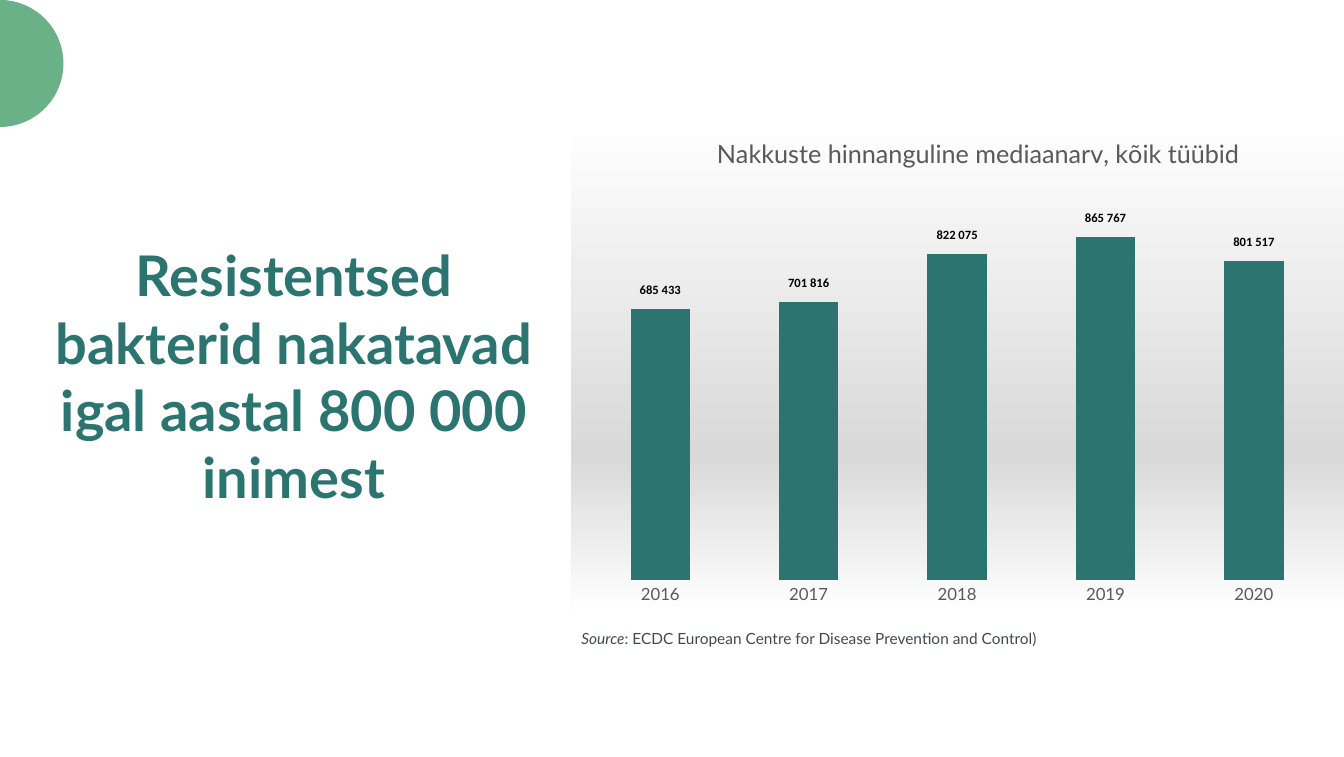
from dataclasses import dataclass
from math import cos, pi, sin

from lxml import etree
from pptx import Presentation
from pptx.chart.data import CategoryChartData
from pptx.dml.color import RGBColor
from pptx.enum.chart import XL_CHART_TYPE as ChartType, XL_TICK_MARK as Tick
from pptx.enum.text import MSO_ANCHOR as Anchor, MSO_AUTO_SIZE as AutoSize, PP_ALIGN as Align
from pptx.oxml import parse_xml
from pptx.oxml.ns import nsdecls, qn
from pptx.util import Cm, Pt

TEAL, GREEN, GREY, SLATE, BLACK = "2C7470", "6BB188", "595959", "3F4A52", "000000"


@dataclass
class Box:
    left: float
    top: float
    width: float
    height: float

    def lengths(self) -> tuple:
        return Cm(self.left), Cm(self.top), Cm(self.width), Cm(self.height)

    def within(self, outer: "Box") -> dict[str, float]:
        """Position as fractions of the outer box."""
        return {"x": (self.left - outer.left) / outer.width,
                "y": (self.top - outer.top) / outer.height,
                "w": self.width / outer.width, "h": self.height / outer.height}


@dataclass
class YearCount:
    year: str
    index: int  # share of the highest year, in percent
    infections: int

    def label(self) -> str:
        return f"{self.infections:,}".replace(",", " ")


YEARS = [
    YearCount("2016", 79, 685433),
    YearCount("2017", 81, 701816),
    YearCount("2018", 95, 822075),
    YearCount("2019", 100, 865767),
    YearCount("2020", 93, 801517),
]
CHART = Box(14.4, 2.97, 19.47, 12.5)
PLOT = Box(14.77, 5.97, 18.7, 8.65)
CHART_TITLE = Box(17.95, 3.3, 13.3, 0.9)


def rgb(value: str) -> RGBColor:
    return RGBColor.from_string(value)


def style(font, size: float, color: str, name: str = "Lato", bold: bool = False) -> None:
    font.size, font.name, font.bold = Pt(size), name, bold
    font.color.rgb = rgb(color)


def add_text(s, box: Box, text: str):
    tf = s.shapes.add_textbox(*box.lengths()).text_frame
    tf.word_wrap = True
    tf.text = text
    return tf


def manual_layout(place: dict[str, float], inner: bool = False):
    """Chart layout element for the given fractions."""
    layout = etree.Element(qn("c:layout"))
    manual = etree.SubElement(layout, qn("c:manualLayout"))
    values = {"layoutTarget": "inner"} if inner else {}
    values |= {"xMode": "edge", "yMode": "edge"}
    values |= {k: f"{v:.4f}" for k, v in place.items()}
    for tag, value in values.items():
        etree.SubElement(manual, qn(f"c:{tag}")).set("val", value)
    return layout


def replace_layout(parent, layout, position: int) -> None:
    for old in parent.findall(qn("c:layout")):
        parent.remove(old)
    parent.insert(position, layout)


def add_half_disc(s, radius: float) -> None:
    steps = 90
    angles = [pi * i / steps - pi / 2 for i in range(steps + 1)]
    points = [(Cm(radius * cos(a)), Cm(radius * (1 + sin(a)))) for a in angles]
    builder = s.shapes.build_freeform(*points[0])
    builder.add_line_segments(points[1:], close=True)
    sp = builder.convert_to_shape()
    sp.shadow.inherit = False
    sp.fill.solid()
    sp.fill.fore_color.rgb = rgb(GREEN)
    sp.line.fill.background()


def add_infection_chart(s) -> None:
    data = CategoryChartData(number_format="#,##0")
    data.categories = [y.year for y in YEARS]
    data.add_series("Series 1", [y.index for y in YEARS])
    chart = s.shapes.add_chart(ChartType.COLUMN_CLUSTERED, *CHART.lengths(), data).chart
    style(chart.font, 10, BLACK)
    chart.has_legend = False

    # Chart title
    chart.has_title = True
    tf = chart.chart_title.text_frame
    tf.text = "Nakkuste hinnanguline mediaanarv, kõik tüübid"
    style(tf.paragraphs[0].runs[0].font, 18, GREY)
    place = CHART_TITLE.within(CHART)
    title_layout = manual_layout({k: place[k] for k in "xy"})
    replace_layout(chart.chart_title._element, title_layout, 1)
    chart.chart_title.include_in_layout = False

    # Columns
    plot = chart.plots[0]
    plot.gap_width, plot.overlap, plot.vary_by_categories = 150, -25, False
    fill = plot.series[0].format.fill
    fill.solid()
    fill.fore_color.rgb = rgb(TEAL)
    plot_area = chart._chartSpace.chart.plotArea
    replace_layout(plot_area, manual_layout(PLOT.within(CHART), inner=True), 0)

    # Axes
    years, values = chart.category_axis, chart.value_axis
    years.major_tick_mark = years.minor_tick_mark = Tick.NONE
    years.format.line.fill.background()
    style(years.tick_labels.font, 12, GREY)
    values.minimum_scale, values.maximum_scale = 0, 100
    values.has_major_gridlines = False
    values.visible = False

    # Background gradient
    stops = "".join(f'<a:gs pos="{pos}000"><a:srgbClr val="{color}"/></a:gs>'
                    for pos, color in ((0, "FFFFFF"), (68, "D9D9D9"), (100, "FFFFFF")))
    chart._chartSpace.chart.addnext(parse_xml(
        f'<c:spPr {nsdecls("c", "a")}><a:gradFill><a:gsLst>{stops}</a:gsLst>'
        '<a:lin ang="5400000" scaled="0"/></a:gradFill><a:ln><a:noFill/></a:ln></c:spPr>'))


def add_count_labels(s) -> None:
    """Infection counts centred above the columns."""
    width, height, rise = 1.7, 0.56, 0.69
    pitch = PLOT.width / len(YEARS)
    for i, year in enumerate(YEARS):
        left = PLOT.left + pitch * (i + 0.5) - width / 2
        top = PLOT.top + PLOT.height * (1 - year.index / 100) - rise
        tf = add_text(s, Box(left, top, width, height), year.label())
        tf.margin_left = tf.margin_right = tf.margin_top = tf.margin_bottom = 0
        p = tf.paragraphs[0]
        p.alignment = Align.CENTER
        style(p.runs[0].font, 9, BLACK, "Calibri", bold=True)


def add_title(s) -> None:
    title = s.shapes.title
    title.left, title.top, title.width, title.height = Box(0.84, 5.94, 13.13, 7.04).lengths()
    tf = title.text_frame
    tf.text = "Resistentsed bakterid nakatavad igal aastal 800 000 inimest"
    tf.word_wrap, tf.auto_size, tf.vertical_anchor = True, AutoSize.NONE, Anchor.TOP
    p = tf.paragraphs[0]
    p.alignment = Align.CENTER
    style(p.runs[0].font, 40, TEAL, bold=True)


def add_source(s) -> None:
    p = add_text(s, Box(14.4, 15.72, 16.94, 0.74), "Source").paragraphs[0]
    p.add_run().text = ": ECDC European Centre for Disease Prevention and Control)"
    for r in p.runs:
        style(r.font, 11, SLATE)
    p.runs[0].font.italic = True


def main() -> None:
    prs = Presentation()
    prs.slide_width, prs.slide_height = Cm(33.87), Cm(19.07)
    s = prs.slides.add_slide(prs.slide_layouts[5])
    add_half_disc(s, 1.6)
    add_title(s)
    add_infection_chart(s)
    add_count_labels(s)
    add_source(s)
    prs.save("out.pptx")


if __name__ == "__main__":
    main()
